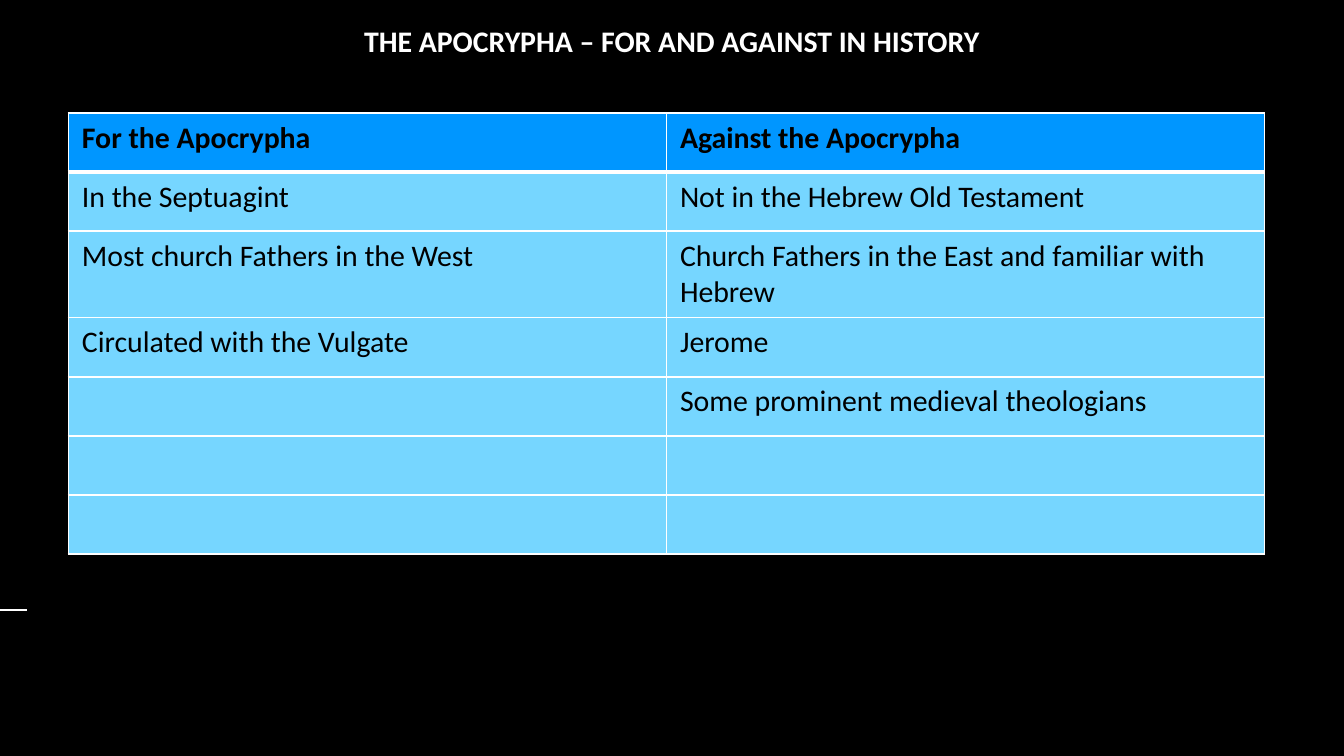
import pptx
import pptx.util
import pptx.dml.color
import pptx.enum.shapes
import pptx.enum.text
import pptx.oxml
import pptx.oxml.ns

COLORS = {"background": "000000", "header": "0096FF", "body": "76D6FF",
          "line": "FFFFFF", "title": "FFFFFF", "text": "000000"}
RGB = {name: pptx.dml.color.RGBColor.from_string(c) for name, c in COLORS.items()}
ROWS = [
    ("For the Apocrypha", "Against the Apocrypha"),
    ("In the Septuagint", "Not in the Hebrew Old Testament"),
    ("Most church Fathers in the West", "Church Fathers in the East and familiar with Hebrew"),
    ("Circulated with the Vulgate", "Jerome"),
    ("", "Some prominent medieval theologians"),
    ("", ""),
    ("", ""),
]


def add_run(p, text, color, bold):
    r = p.add_run()
    r.text = text
    r.font.name = "Calibri"
    r.font.size = pptx.util.Pt(16)
    r.font.bold = bold
    r.font.color.rgb = RGB[color]


def add_border(cell, side, points):
    cell._tc.get_or_add_tcPr().append(pptx.oxml.parse_xml(
        f'<a:ln{side} {pptx.oxml.ns.nsdecls("a")} w="{pptx.util.Pt(points)}">'
        f'<a:solidFill><a:srgbClr val="{COLORS["line"]}"/></a:solidFill></a:ln{side}>'))


prs = pptx.Presentation()
prs.slide_width = pptx.util.Inches(10)
prs.slide_height = prs.slide_width * 9 // 16
W, H = prs.slide_width, prs.slide_height

s = prs.slides.add_slide(prs.slide_layouts[5])
s.background.fill.solid()
s.background.fill.fore_color.rgb = RGB["background"]

rule_y = round(W * 0.454)
rule = s.shapes.add_connector(pptx.enum.shapes.MSO_CONNECTOR.STRAIGHT,
                              round(W * -0.016), rule_y, round(W * 0.02), rule_y)
rule.line.color.rgb = RGB["line"]
rule.line.width = pptx.util.Pt(0.75)
rule._element.spPr.append(pptx.oxml.parse_xml(f'<a:effectLst {pptx.oxml.ns.nsdecls("a")}/>'))

title = s.shapes.title
title.width, title.height = round(W * 0.497), round(H * 0.06)
title.left, title.top = (W - title.width) // 2, round(W * 0.012)
tf = title.text_frame
tf.word_wrap = True
tf.auto_size = pptx.enum.text.MSO_AUTO_SIZE.NONE
tf.vertical_anchor = pptx.enum.text.MSO_ANCHOR.TOP
p = tf.paragraphs[0]
p.alignment = pptx.enum.text.PP_ALIGN.CENTER
add_run(p, "THE APOCRYPHA – FOR AND AGAINST IN HISTORY", "title", True)

row_height = pptx.util.Inches(0.44)
table = s.shapes.add_table(len(ROWS), 2, round(W * 0.051), round(W * 0.084),
                           round(W * 0.89), row_height * len(ROWS)).table
for i, texts in enumerate(ROWS):
    table.rows[i].height = row_height
    for j, text in enumerate(texts):
        cell = table.cell(i, j)
        for side in "LRTB":
            under_header = (i, side) in ((0, "B"), (1, "T"))
            add_border(cell, side, 3 if under_header else 1)
        cell.fill.solid()
        cell.fill.fore_color.rgb = RGB["body" if i else "header"]
        p = cell.text_frame.paragraphs[0]
        if text:
            add_run(p, text, "text", i == 0)
        else:
            p.font.size = pptx.util.Pt(16)

prs.save("out.pptx")
